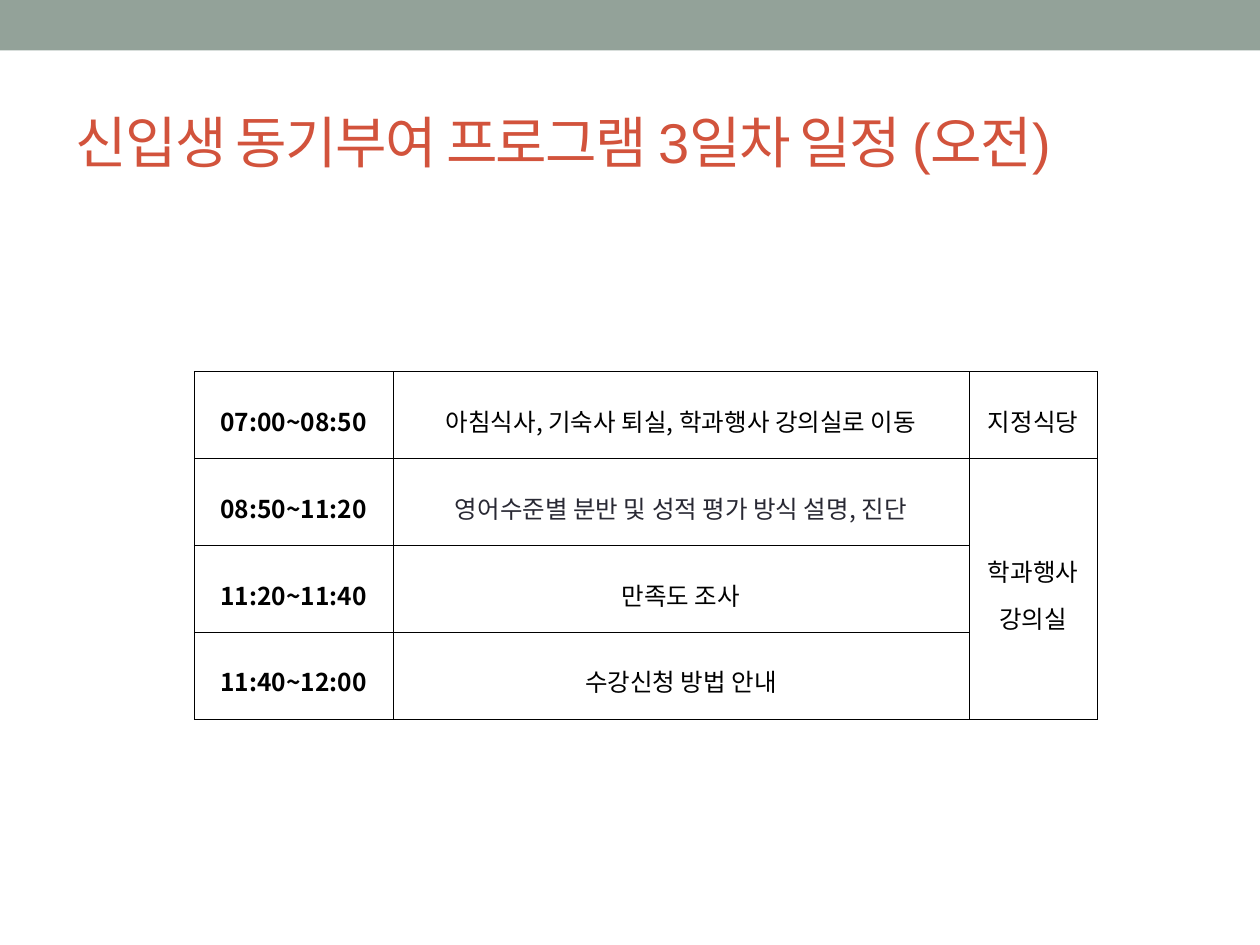
from lxml import etree
from pptx import Presentation
from pptx.dml.color import RGBColor
from pptx.enum.shapes import MSO_SHAPE
from pptx.enum.text import MSO_ANCHOR, MSO_AUTO_SIZE, PP_ALIGN
from pptx.oxml.ns import qn
from pptx.util import Inches, Pt

RECTANGLE = MSO_SHAPE.RECTANGLE
MIDDLE = MSO_ANCHOR.MIDDLE
NO_AUTOFIT = MSO_AUTO_SIZE.NONE
LEFT, CENTER = PP_ALIGN.LEFT, PP_ALIGN.CENTER
TITLE_ONLY = 5

TIMES = ["07:00~08:50", "08:50~11:20", "11:20~11:40", "11:40~12:00"]
ACTIVITIES = [
    "아침식사, 기숙사 퇴실, 학과행사 강의실로 이동",
    "영어수준별 분반 및 성적 평가 방식 설명, 진단",
    "만족도 조사",
    "수강신청 방법 안내",
]


def color(hex_string):
    return RGBColor.from_string(hex_string)


class ScheduleSlide:
    """Style and current slide; boxes are shares of the slide's size."""

    text_font, time_font = "Arial", "Noto Sans CJK KR"
    band, accent, black, soft_black = "93A299", "D2533C", "000000", "292934"
    title_size, cell_size, line_spacing, border_width = 32, 14, 1.3, 0.28

    def __init__(self, deck):
        self.deck = deck
        self.slide = deck.slides.add_slide(deck.slide_layouts[TITLE_ONLY])

    def across(self, share):
        return round(self.deck.slide_width * share)

    def down(self, share):
        return round(self.deck.slide_height * share)

    def place(self, left, top, width, height):
        return self.across(left), self.down(top), self.across(width), self.down(height)

    def format_span(self, span, font, size, hex_string, bold=False):
        span.font.name, span.font.size, span.font.bold = font, Pt(size), bold
        span.font.color.rgb = color(hex_string)

    def add_band(self, *box):
        band = self.slide.shapes.add_shape(RECTANGLE, *self.place(*box))
        band.shadow.inherit = False
        band.fill.solid()
        band.fill.fore_color.rgb = color(self.band)
        band.line.fill.background()

    def add_title(self, text, *box):
        title = self.slide.shapes.title
        title.left, title.top, title.width, title.height = self.place(*box)
        frame = title.text_frame
        frame.text = text
        frame.vertical_anchor, frame.auto_size = MIDDLE, NO_AUTOFIT
        para = frame.paragraphs[0]
        para.alignment = LEFT
        span = para.runs[0]
        self.format_span(span, self.text_font, self.title_size, self.accent)
        span.font._element.set("spc", "-100")

    def add_table(self, row_count, column_shares, left, top, height):
        box = self.place(left, top, sum(column_shares), height)
        table = self.slide.shapes.add_table(row_count, len(column_shares), *box).table
        table.first_row = table.horz_banding = False
        for column, share in zip(table.columns, column_shares):
            column.width = self.across(share)
        for cell in table.iter_cells():
            cell.fill.background()
            cell.vertical_anchor = MIDDLE
            cell.margin_left = cell.margin_right = Inches(0.07)
            cell.margin_top = cell.margin_bottom = Inches(0.02)
            self.add_borders(cell)
        return table

    def add_borders(self, cell):
        properties = cell._tc.get_or_add_tcPr()
        for position, side in enumerate(("lnL", "lnR", "lnT", "lnB")):
            line = etree.Element(qn(f"a:{side}"), w=str(int(Pt(self.border_width))))
            fill = etree.SubElement(line, qn("a:solidFill"))
            etree.SubElement(fill, qn("a:srgbClr"), val=self.black)
            properties.insert(position, line)

    def fill_cell(self, cell, text, font=text_font, hex_string=black, bold=False, hanging=False):
        """Write one paragraph per line; commas take the time font."""
        cell.text_frame.text = text
        for para in cell.text_frame.paragraphs:
            pieces = para.text.replace(", ", "|, |").split("|")
            para.text = ""
            para.alignment, para.line_spacing = CENTER, self.line_spacing
            if hanging:
                indents = para._p.get_or_add_pPr()
                indents.set("marL", str(Inches(0.14)))
                indents.set("indent", str(Inches(-0.14)))
            for piece in pieces:
                span = para.add_run()
                span.text = piece
                piece_font = self.time_font if piece == ", " else font
                self.format_span(span, piece_font, self.cell_size, hex_string, bold)


def main():
    deck = Presentation()
    deck.slide_width, deck.slide_height = Inches(10), Inches(7.5)
    page = ScheduleSlide(deck)
    page.add_band(0, 0, 1, 0.4 / 7.5)
    page.add_title("신입생 동기부여 프로그램 3일차 일정 (오전)", 0.05, 0.58 / 7.5, 0.9, 1.08 / 7.5)

    table = page.add_table(len(TIMES), [0.158, 0.457, 0.102], 0.154, 2.95 / 7.5, 2.76 / 7.5)
    for row, (time, activity) in enumerate(zip(TIMES, ACTIVITIES)):
        ink = page.soft_black if row == 1 else page.black
        page.fill_cell(table.cell(row, 0), time, font=page.time_font, bold=True)
        page.fill_cell(table.cell(row, 1), activity, hex_string=ink, hanging=True)
    table.cell(1, 2).merge(table.cell(3, 2))
    page.fill_cell(table.cell(0, 2), "지정식당")
    page.fill_cell(table.cell(1, 2), "학과행사\n강의실")
    deck.save("out.pptx")


if __name__ == "__main__":
    main()
